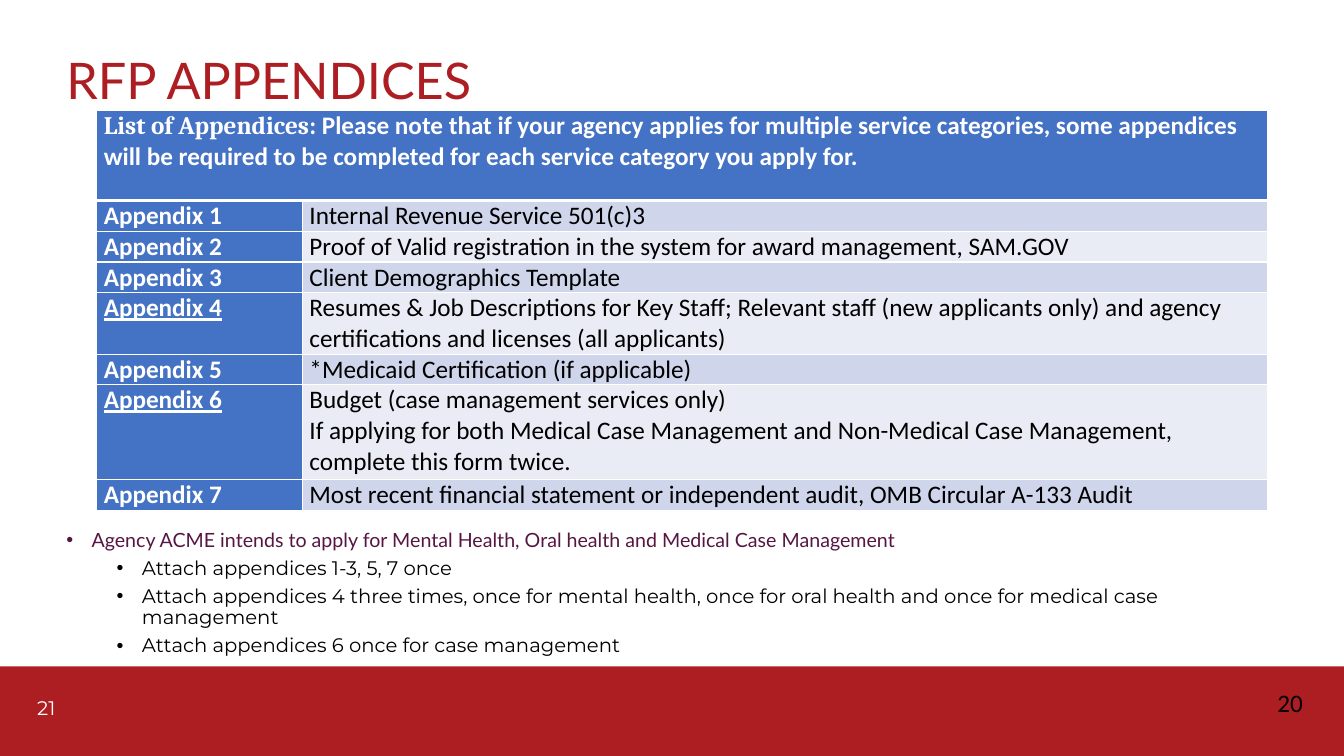
from pptx import Presentation
from pptx.dml.color import RGBColor
from pptx.enum.shapes import MSO_SHAPE
from pptx.enum.text import MSO_ANCHOR
from pptx.oxml import parse_xml
from pptx.oxml.ns import nsdecls
from pptx.util import Inches, Pt

RED = RGBColor(0xAD, 0x1E, 0x23)
BLUE = RGBColor(0x44, 0x72, 0xC4)
PALE = RGBColor(0xCF, 0xD5, 0xEA)
LIGHT = RGBColor(0xE9, 0xEB, 0xF5)
PLUM = RGBColor(0x56, 0x16, 0x43)
WHITE = RGBColor(0xFF, 0xFF, 0xFF)
BLACK = RGBColor(0, 0, 0)

TITLE = "RFP APPENDICES"
LEAD = "List of Appendices: "
NOTE = ("Please note that if your agency applies for multiple service categories, "
        "some appendices will be required to be completed for each service category "
        "you apply for.")
ROWS = [
    (0.305, False, ["Internal Revenue Service 501(c)3"]),
    (0.305, False, ["Proof of Valid registration in the system for award management, SAM.GOV"]),
    (0.305, False, ["Client Demographics Template"]),
    (0.61, True, ["Resumes & Job Descriptions for Key Staff; Relevant staff (new applicants "
                  "only) and agency certifications and licenses (all applicants)"]),
    (0.305, False, ["*Medicaid Certification (if applicable)"]),
    (0.94, True, ["Budget (case management services only)",
                  "If applying for both Medical Case Management and Non-Medical Case "
                  "Management, complete this form twice."]),
    (0.305, False, ["Most recent financial statement or independent audit, "
                    "OMB Circular A-133 Audit"]),
]
HEAD = 0.89
COLS = [2.04, 9.57]
CASE = "Agency ACME intends to apply for Mental Health, Oral health and Medical Case Management"
STEPS = [
    "Attach appendices 1-3, 5, 7 once",
    "Attach appendices 4 three times, once for mental health, once for oral health "
    "and once for medical case management",
    "Attach appendices 6 once for case management",
]


def style(font, color, **form):
    font.color.rgb = color
    for key, val in form.items():
        setattr(font, key, val)


def add_text(para, text, color, name, size, **form):
    run = para.add_run()
    run.text = text
    style(run.font, color, name=name, size=Pt(size), **form)


def add_box(left, top, wide, high):
    box = slide.shapes.add_textbox(Inches(left), Inches(top), Inches(wide), Inches(high))
    box.text_frame.word_wrap = True
    return box.text_frame


def add_item(para, text, color, name, left, space):
    props = para._p.get_or_add_pPr()
    props.set("marL", str(Inches(left)))
    props.set("indent", str(Inches(-0.25)))
    props.append(parse_xml(f'<a:buFont {nsdecls("a")} typeface="Arial"/>'))
    props.append(parse_xml(f'<a:buChar {nsdecls("a")} char="•"/>'))
    para.line_spacing = 0.9
    para.space_before = Pt(space)
    add_text(para, text, color, name, 14)


def fill_cell(cell, fill, top=1, base=1):
    cell.margin_left = cell.margin_right = Inches(0.07)
    cell.margin_top = cell.margin_bottom = 0
    cell.fill.solid()
    cell.fill.fore_color.rgb = fill
    props = cell._tc.get_or_add_tcPr()
    for spot, (side, wide) in enumerate(zip("LRTB", (1, 1, top, base))):
        props.insert(spot, parse_xml(
            f'<a:ln{side} {nsdecls("a")} w="{Pt(wide)}"><a:solidFill>'
            f'<a:srgbClr val="{WHITE}"/></a:solidFill></a:ln{side}>'))


deck = Presentation()
deck.slide_width, deck.slide_height = Inches(13.33), Inches(7.5)
slide = deck.slides.add_slide(deck.slide_layouts[6])

band = slide.shapes.add_shape(MSO_SHAPE.RECTANGLE, 0, Inches(6.61), Inches(13.33), Inches(0.89))
band.shadow.inherit = False
band.fill.solid()
band.fill.fore_color.rgb = RED
band.line.fill.background()

add_text(add_box(0.27, 6.85, 0.66, 0.4).paragraphs[0], "21", WHITE, "Montserrat", 14)
title = add_box(0.56, 0.4, 11.5, 0.85)
title.vertical_anchor = MSO_ANCHOR.MIDDLE
title.paragraphs[0].line_spacing = 0.9
add_text(title.paragraphs[0], TITLE, RED, "Lato", 36)

highs = [HEAD] + [row[0] for row in ROWS]
table = slide.shapes.add_table(len(highs), 2, Inches(0.96), Inches(1.1),
                               Inches(sum(COLS)), Inches(sum(highs))).table
for col, wide in zip(table.columns, COLS):
    col.width = Inches(wide)
for row, high in zip(table.rows, highs):
    row.height = Inches(high)

top = table.cell(0, 0)
top.merge(table.cell(0, 1))
for col in range(2):
    fill_cell(table.cell(0, col), BLUE, base=3)
for text, name in ((LEAD, "Cambria"), (NOTE, "Calibri")):
    add_text(top.text_frame.paragraphs[0], text, WHITE, name, 18, bold=True)

for num, (_, under, lines) in enumerate(ROWS, 1):
    key, info = table.cell(num, 0), table.cell(num, 1)
    edge = 3 if num == 1 else 1
    fill_cell(key, BLUE, edge)
    fill_cell(info, PALE if num % 2 else LIGHT, edge)
    add_text(key.text_frame.paragraphs[0], f"Appendix {num}", WHITE, "Calibri", 18,
             bold=True, underline=under)
    for pos, line in enumerate(lines):
        frame = info.text_frame
        para = frame.add_paragraph() if pos else frame.paragraphs[0]
        add_text(para, line, BLACK, "Calibri", 18, bold=False)

add_text(add_box(12.57, 6.77, 0.57, 0.4).paragraphs[0], "20", BLACK, "Calibri", 18)

body = add_box(0.56, 5.21, 11.5, 1.4)
add_item(body.paragraphs[0], CASE, PLUM, "Lato", 0.25, 0)
for step in STEPS:
    add_item(body.add_paragraph(), step, BLACK, "Montserrat", 0.75, 5)

deck.save("out.pptx")
